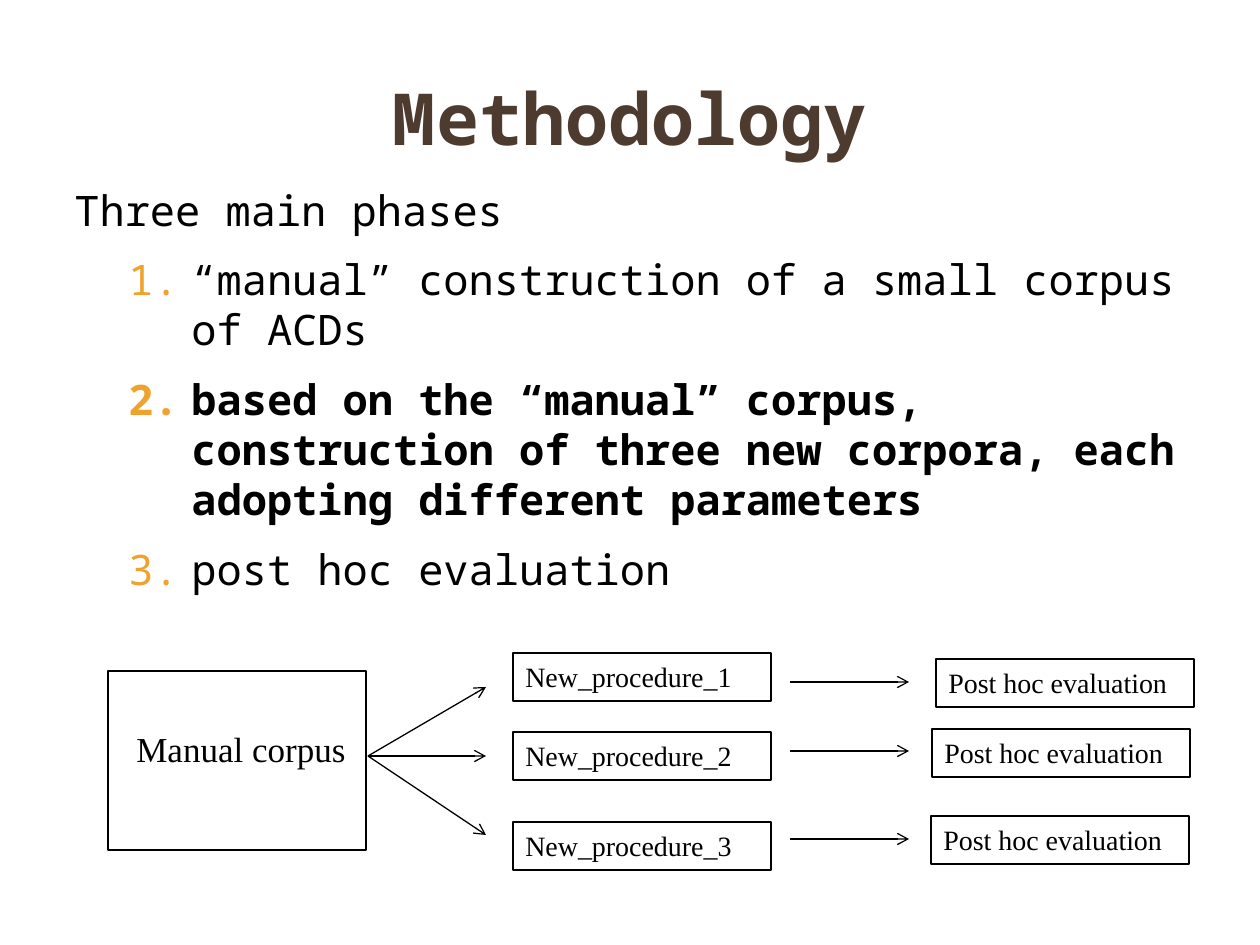
import pptx
import pptx.dml.color
import pptx.enum.shapes
import pptx.enum.text
import pptx.oxml.ns
import pptx.util
from dataclasses import dataclass
from lxml import etree

SCALE = 914400 / 126


@dataclass(frozen=True)
class Theme:
    brown: str = "4E3B30"
    gold: str = "F0A22E"
    black: str = "000000"
    white: str = "FFFFFF"
    mono: str = "Noto Sans Mono"
    serif: str = "Times New Roman"
    title: int = 41
    body: int = 24
    label: int = 20
    small: int = 16
    line: float = 0.75


THEME = Theme()
ALIGN = pptx.enum.text.PP_ALIGN
GROW = pptx.enum.text.MSO_AUTO_SIZE.SHAPE_TO_FIT_TEXT


def emu(*px):
    return [pptx.util.Emu(round(n * SCALE)) for n in px]


def color(code):
    return pptx.dml.color.RGBColor.from_string(code)


def add_node(parent, tag, **attrs):
    return etree.SubElement(parent, pptx.oxml.ns.qn(tag), **attrs)


def style(para, size, face, code, bold=False, align=ALIGN.LEFT):
    para.alignment = align
    for run in para.runs:
        run.font.size = pptx.util.Pt(size)
        run.font.name = face
        run.font.bold = bold
        run.font.color.rgb = color(code)


def add_text(slide, box, text=""):
    frame = slide.shapes.add_textbox(*emu(*box)).text_frame
    frame.word_wrap = True
    frame.text = text
    return frame


def add_box(slide, box, text=""):
    shape = slide.shapes.add_shape(
        pptx.enum.shapes.MSO_SHAPE.RECTANGLE, *emu(*box))
    shape.shadow.inherit = False
    shape.fill.background()
    shape.line.color.rgb = color(THEME.black)
    shape.line.width = pptx.util.Pt(THEME.line)
    if text:
        frame = shape.text_frame
        frame.word_wrap = True
        frame.vertical_anchor = pptx.enum.text.MSO_ANCHOR.TOP
        frame.text = text
        style(frame.paragraphs[0], THEME.small, THEME.serif, THEME.black)
        frame.auto_size = GROW


def add_arrow(slide, *ends):
    arrow = slide.shapes.add_connector(
        pptx.enum.shapes.MSO_CONNECTOR.STRAIGHT, *emu(*ends))
    arrow.line.color.rgb = color(THEME.black)
    arrow.line.width = pptx.util.Pt(THEME.line)
    add_node(arrow.line._get_or_add_ln(), "a:tailEnd", type="arrow")
    add_node(arrow._element.spPr, "a:effectLst")


def add_title(slide, box):
    frame = add_text(slide, box, "Methodology")
    frame.vertical_anchor = pptx.enum.text.MSO_ANCHOR.MIDDLE
    style(frame.paragraphs[0], THEME.title, THEME.mono, THEME.brown,
          True, ALIGN.CENTER)


def add_phases(slide, box):
    frame = add_text(slide, box)
    items = [
        ("Three main phases", False),
        ("“manual” construction of a small corpus of ACDs", False),
        ("based on the “manual” corpus, construction of three new corpora, "
         "each adopting different parameters", True),
        ("post hoc evaluation", False),
    ]
    for i, (text, bold) in enumerate(items):
        para = frame.add_paragraph() if i else frame.paragraphs[0]
        para.text = text
        style(para, THEME.body, THEME.mono, THEME.black, bold)
        para.space_before = pptx.util.Pt(THEME.body * 0.2)
        para.space_after = pptx.util.Pt(6)
        props = para._p.get_or_add_pPr()
        left, hang = emu(117, -63) if i else emu(48, -48)
        props.set("marL", str(left))
        props.set("indent", str(hang))
        if i:
            para.level = 1
            tint = add_node(props, "a:buClr")
            add_node(tint, "a:srgbClr", val=THEME.gold)
            add_node(props, "a:buFont", typeface=THEME.mono)
            add_node(props, "a:buAutoNum", type="arabicPeriod")
        else:
            add_node(props, "a:buNone")


def add_flow(slide, box):
    x, y, wide, high = box
    cell, row = 258, 48
    add_box(slide, (x, y + 18, cell, 179))
    label = add_text(slide, (x + 4, y + 68, cell, 54), "Manual corpus")
    style(label.paragraphs[0], THEME.label, THEME.serif, THEME.black,
          align=ALIGN.CENTER)
    label.auto_size = GROW
    rows = [
        (0, 34, 29, 828, 6),
        (79, 103, 98, 824, 76),
        (high - row, 182, 186, 823, 163),
    ]
    for i, (top, tip, mid, left, drop) in enumerate(rows, 1):
        add_box(slide, (x + 405, y + top, cell, row), f"New_procedure_{i}")
        add_arrow(slide, x + 260, y + 103, x + 378, y + tip)
        add_arrow(slide, x + 682, y + mid, x + 801, y + mid)
        add_box(slide, (x + left, y + drop, cell, row), "Post hoc evaluation")


def main():
    deck = pptx.Presentation()
    deck.slide_width, deck.slide_height = emu(1260, 945)
    slide = deck.slides.add_slide(deck.slide_layouts[6])
    slide.background.fill.solid()
    slide.background.fill.fore_color.rgb = color(THEME.white)
    add_title(slide, (63, 38, 1134, 158))
    add_phases(slide, (62, 178, 1134, 469))
    add_flow(slide, (108, 653, 1086, 217))
    deck.save("out.pptx")


if __name__ == "__main__":
    main()
